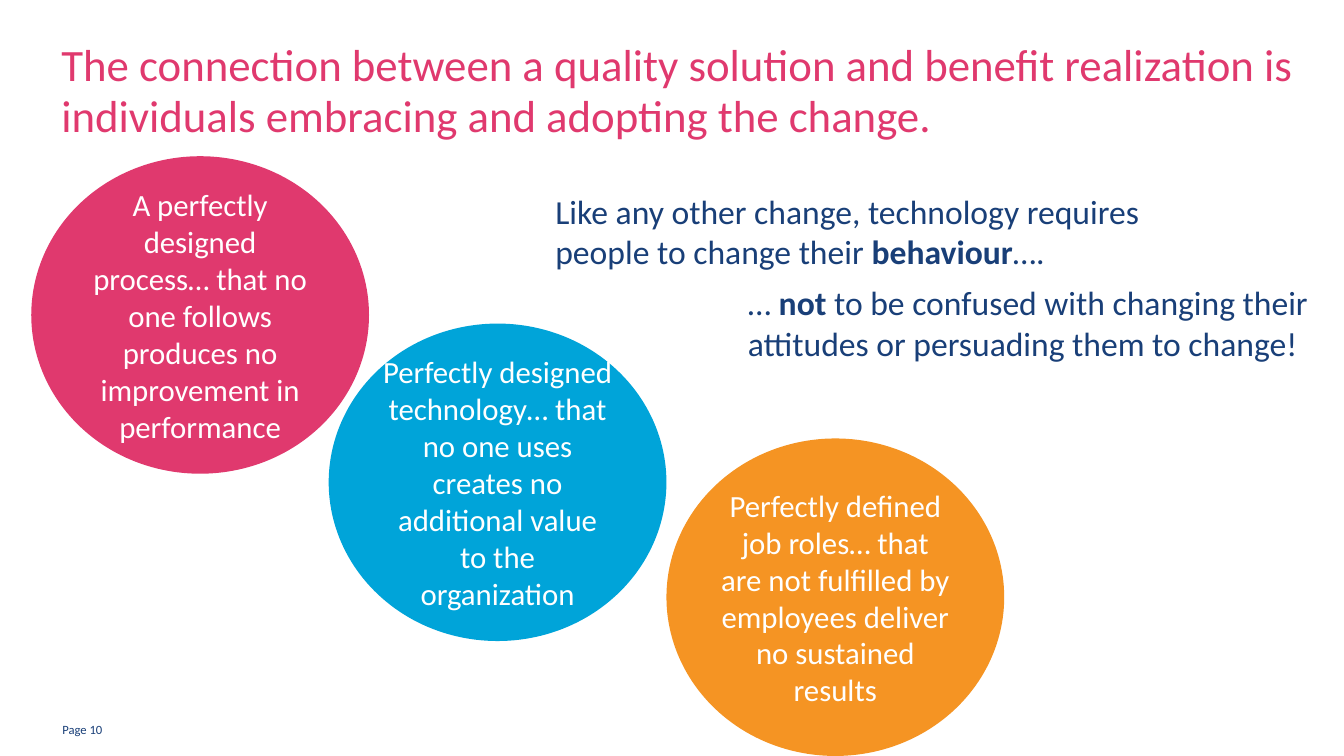
from pptx import Presentation
from pptx.dml.color import RGBColor
from pptx.enum.shapes import MSO_SHAPE
from pptx.enum.text import MSO_ANCHOR, PP_ALIGN
from pptx.util import Inches, Pt

# Content: text runs are (text, bold)
TITLE = [("The connection between a quality solution and benefit realization is "
          "individuals embracing and adopting the change.", False)]
PAGE = [("Page 10", False)]
BEHAVIOUR = [("Like any other change, technology requires people to change their ", False),
             ("behaviour", True), ("….", False)]
ATTITUDES = [("… ", False), ("not", True),
             (" to be confused with changing their attitudes or persuading them to change!", False)]
CIRCLES = [  # left, top, colour, text
    (0.31, 1.55, "pink", "A perfectly designed process… that no one follows "
                         "produces no improvement in performance"),
    (3.26, 3.21, "blue", "Perfectly designed technology… that no one uses "
                         "creates no additional value to the organization"),
    (6.61, 4.35, "orange", "Perfectly defined job roles… that are not fulfilled by "
                           "employees deliver no sustained results"),
]
CIRCLE_SIZE = (3.35, 3.15)

THEME = {
    "font": "Calibri",
    "colours": {"pink": "E0396E", "blue": "00A4D9", "orange": "F59423",
                "navy": "193F78", "white": "FFFFFF"},
    "sizes": {"title": 32, "statement": 24, "circle": 22, "page": 9},
}


def colour(name):
    return RGBColor.from_string(THEME["colours"][name])


def write(holder, runs, size, ink="navy", insets=(0.1, 0.05, 0.1, 0.05),
          anchor=MSO_ANCHOR.TOP, align=PP_ALIGN.LEFT, line_spacing=None, after=None):
    frame = holder.text_frame
    frame.word_wrap = True
    frame.vertical_anchor = anchor
    (frame.margin_left, frame.margin_top,
     frame.margin_right, frame.margin_bottom) = map(Inches, insets)
    paragraph = frame.paragraphs[0]
    paragraph.alignment = align
    if line_spacing is not None:
        paragraph.line_spacing = line_spacing
    if after is not None:
        paragraph.space_after = Pt(after)
    for text, bold in runs:
        run = paragraph.add_run()
        run.text = text
        run.font.name = THEME["font"]
        run.font.size = Pt(THEME["sizes"][size])
        run.font.bold = bold
        run.font.color.rgb = colour(ink)


deck = Presentation()
deck.slide_width, deck.slide_height = Inches(13.33), Inches(7.5)
slide = deck.slides.add_slide(deck.slide_layouts[6])


def add_text(box, runs, size, **style):
    write(slide.shapes.add_textbox(*map(Inches, box)), runs, size, **style)


# Page number, title and first statement
add_text((0.52, 6.91, 9.34, 0.39), PAGE, "page", insets=(0.1, 0.25, 0.06, 0.05))
add_text((0.51, 0.05, 12.69, 1.38), TITLE, "title", ink="pink",
         insets=(0.1, 0.35, 0.1, 0.04), line_spacing=0.95)
add_text((5.41, 1.84, 6.31, 0.91), BEHAVIOUR, "statement")

# Circles stepping down the slide
for left, top, fill, message in CIRCLES:
    circle = slide.shapes.add_shape(
        MSO_SHAPE.OVAL, *map(Inches, (left, top, *CIRCLE_SIZE)))
    circle.shadow.inherit = False
    circle.fill.solid()
    circle.fill.fore_color.rgb = colour(fill)
    circle.line.fill.background()
    write(circle, [(message, False)], "circle", ink="white", insets=(0.04,) * 4,
          anchor=MSO_ANCHOR.MIDDLE, align=PP_ALIGN.CENTER, after=12)

# Second statement
add_text((7.32, 2.75, 5.77, 0.91), ATTITUDES, "statement")

deck.save("out.pptx")
